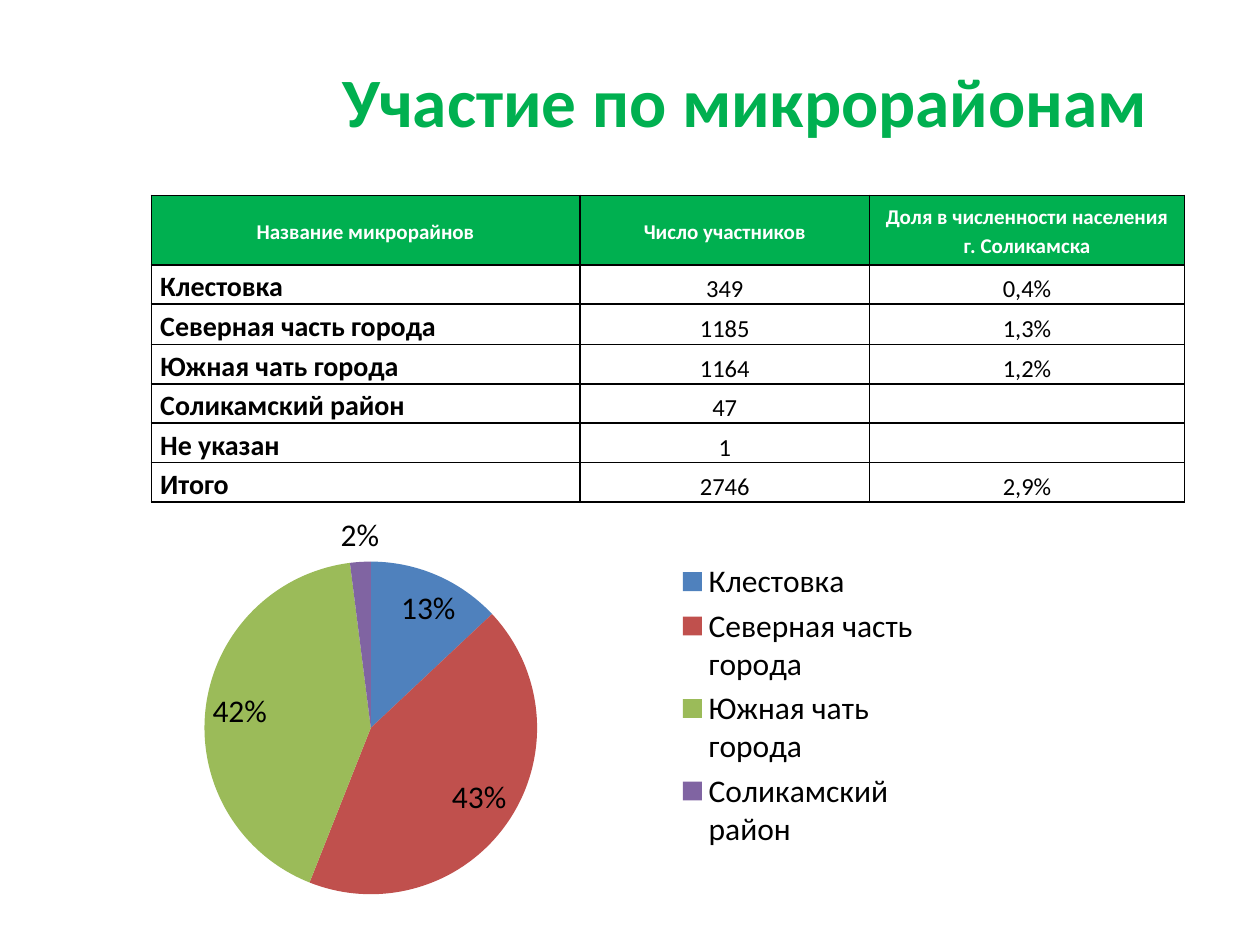
"""Build the slide on participation by city district: a table and a pie chart."""
from lxml import etree
from pptx import Presentation
from pptx.chart.data import CategoryChartData
from pptx.dml.color import RGBColor
from pptx.enum import chart as ch, text
from pptx.oxml import parse_xml
from pptx.oxml.ns import nsdecls, qn
from pptx.util import Cm, Pt

GREEN = RGBColor(0x00, 0xB0, 0x50)
WHITE = RGBColor(0xFF, 0xFF, 0xFF)
BLACK = RGBColor(0x00, 0x00, 0x00)
SLICE_COLOURS = [
    RGBColor(0x4F, 0x81, 0xBD),
    RGBColor(0xC0, 0x50, 0x4D),
    RGBColor(0x9B, 0xBB, 0x59),
    RGBColor(0x80, 0x64, 0xA2),
]
FONT = "Calibri"


def style_font(font, size, colour, bold):
    font.name, font.size, font.bold = FONT, Pt(size), bold
    font.color.rgb = colour


def add_borders(cell):
    properties = cell._tc.get_or_add_tcPr()
    for side in ("lnL", "lnR", "lnT", "lnB"):
        properties.append(parse_xml(
            f'<a:{side} {nsdecls("a")} w="12700"><a:solidFill>'
            f'<a:srgbClr val="{BLACK}"/></a:solidFill></a:{side}>'))


prs = Presentation()
prs.slide_width, prs.slide_height = Cm(25.4), Cm(19.05)
slide = prs.slides.add_slide(prs.slide_layouts[5])

title = slide.shapes.title
title.left, title.top, title.width, title.height = Cm(5.89), Cm(0.53), Cm(18.26), Cm(2.97)
title.text_frame.text = "Участие по микрорайонам"
title.text_frame.vertical_anchor = text.MSO_ANCHOR.MIDDLE
heading = title.text_frame.paragraphs[0]
heading.alignment = text.PP_ALIGN.CENTER
style_font(heading.font, 39.6, GREEN, True)

rows = [
    ("Название микрорайнов", "Число участников", "Доля в численности населения г. Соликамска"),
    ("Клестовка", "349", "0,4%"),
    ("Северная часть города", "1185", "1,3%"),
    ("Южная чать города", "1164", "1,2%"),
    ("Соликамский район", "47", ""),
    ("Не указан", "1", ""),
    ("Итого", "2746", "2,9%"),
]
column_widths = [8.64, 5.84, 6.35]
row_heights = [1.4, 0.74, 0.81, 0.74, 0.74, 0.74, 0.74]
districts = slide.shapes.add_table(
    len(rows), len(column_widths), Cm(3.05), Cm(3.94),
    Cm(sum(column_widths)), Cm(sum(row_heights))).table
for column, width in zip(districts.columns, column_widths):
    column.width = Cm(width)
for row, height in zip(districts.rows, row_heights):
    row.height = Cm(height)

for r, row in enumerate(rows):
    for c, wording in enumerate(row):
        cell = districts.cell(r, c)
        cell.text = wording
        cell.margin_left = cell.margin_right = Cm(0.18)
        cell.margin_top = cell.margin_bottom = 0
        add_borders(cell)
        paragraph = cell.text_frame.paragraphs[0]
        paragraph.line_spacing = 1.15
        paragraph.alignment = text.PP_ALIGN.CENTER
        if r == 0:
            cell.vertical_anchor = text.MSO_ANCHOR.MIDDLE
            cell.fill.solid()
            cell.fill.fore_color.rgb = GREEN
            style_font(paragraph.font, 12, WHITE, True)
            continue
        cell.vertical_anchor = text.MSO_ANCHOR.BOTTOM
        cell.fill.background()
        if c == 0:
            paragraph.alignment = text.PP_ALIGN.LEFT
            style_font(paragraph.font, 16, BLACK, True)
        else:
            paragraph.space_after = Pt(10)
            style_font(paragraph.font, 14, BLACK, False)

shares = CategoryChartData()
shares.categories = [row[0] for row in rows[1:5]]
shares.add_series("Series 1", (13, 43, 42, 2))
pie = slide.shapes.add_chart(
    ch.XL_CHART_TYPE.PIE, Cm(1.5), Cm(10.08), Cm(17.32), Cm(8.28), shares).chart
style_font(pie.font, 18, BLACK, False)
pie.has_title = False
pie.has_legend = True
pie.legend.position = ch.XL_LEGEND_POSITION.RIGHT
pie.legend.include_in_layout = False

plot = pie.plots[0]
plot.vary_by_categories = True
for i, colour in enumerate(SLICE_COLOURS):
    slice_fill = plot.series[0].points[i].format.fill
    slice_fill.solid()
    slice_fill.fore_color.rgb = colour
plot.has_data_labels = True
labels = plot.data_labels
labels.show_percentage = True
labels.show_value = False
labels.number_format, labels.number_format_is_linked = "0%", False
labels.position = ch.XL_LABEL_POSITION.BEST_FIT

plot_area = pie._chartSpace.chart.plotArea
for layout in plot_area.findall(qn("c:layout")):
    plot_area.remove(layout)
layout = etree.Element(qn("c:layout"))
manual = etree.SubElement(layout, qn("c:manualLayout"))
for tag, value in (("layoutTarget", "inner"), ("xMode", "edge"), ("yMode", "edge"),
                   ("x", "0.15"), ("y", "0.15"), ("w", "0.39"), ("h", "0.81")):
    etree.SubElement(manual, qn(f"c:{tag}"), val=value)
plot_area.insert(0, layout)

prs.save("out.pptx")
